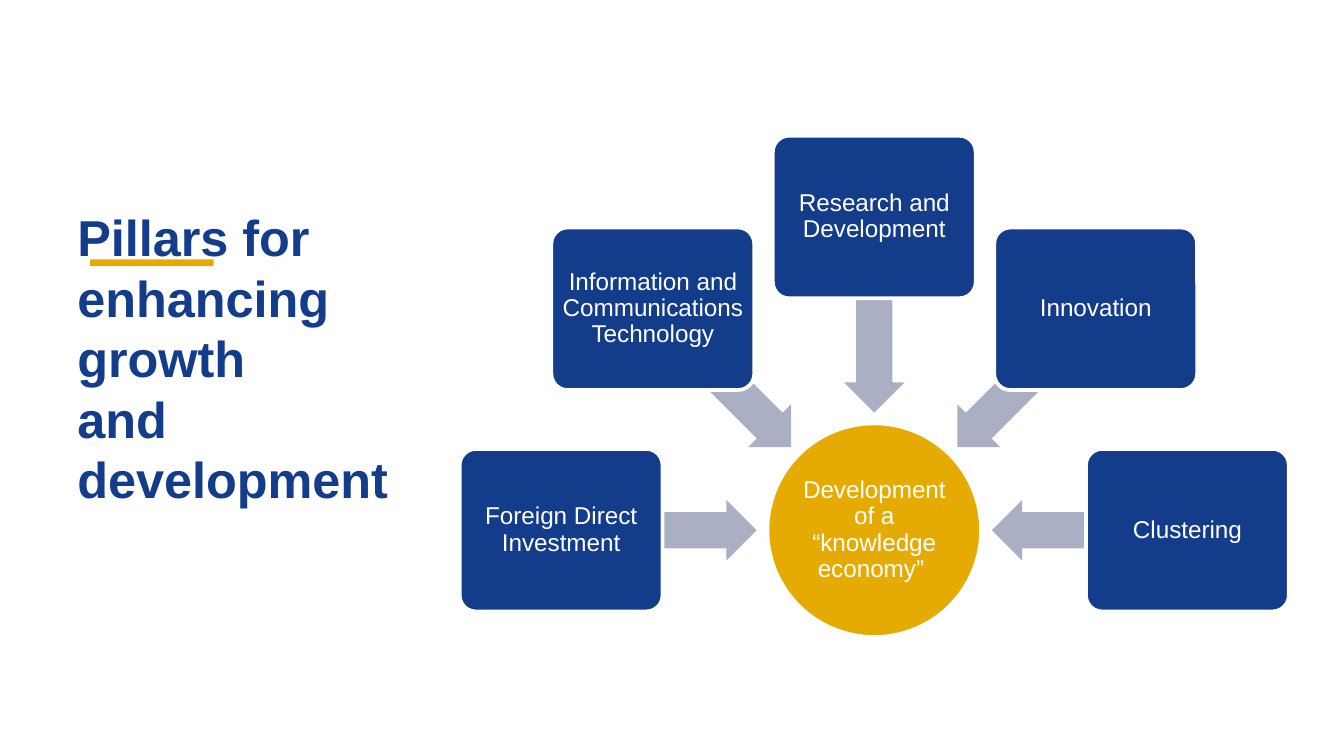
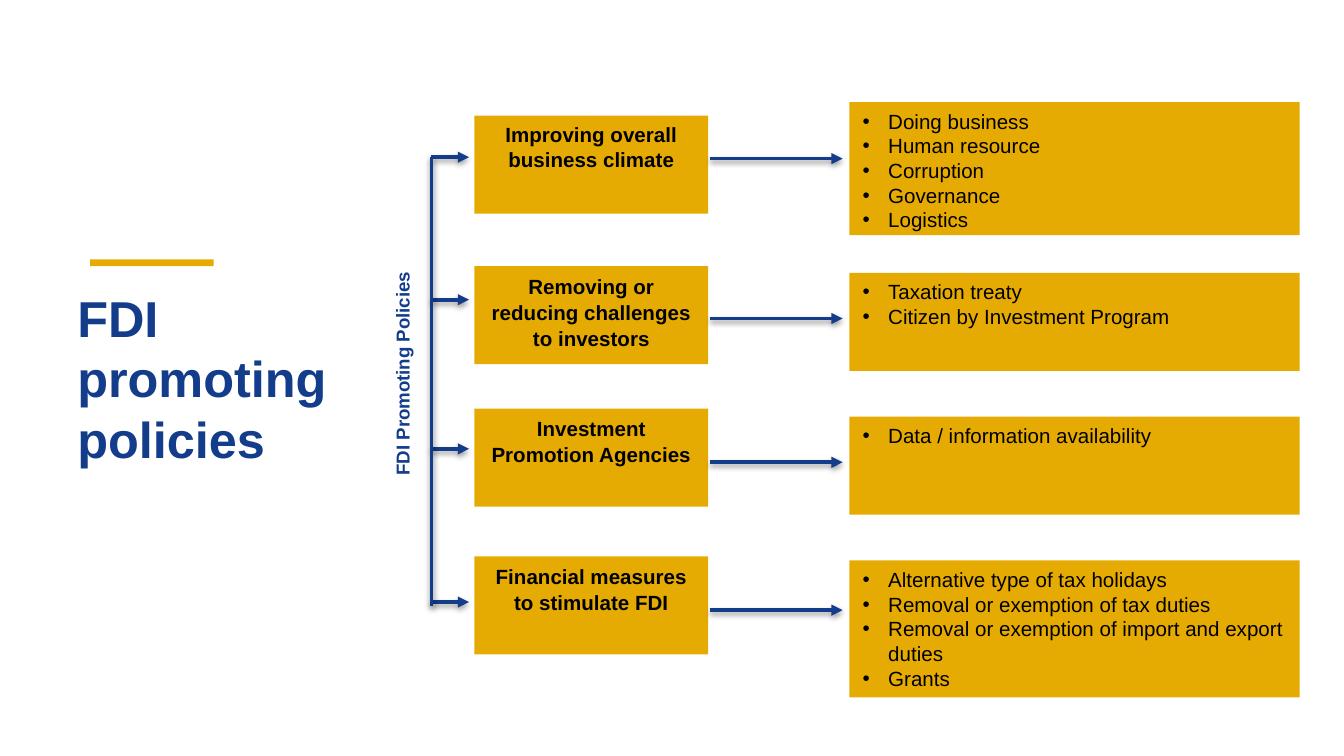
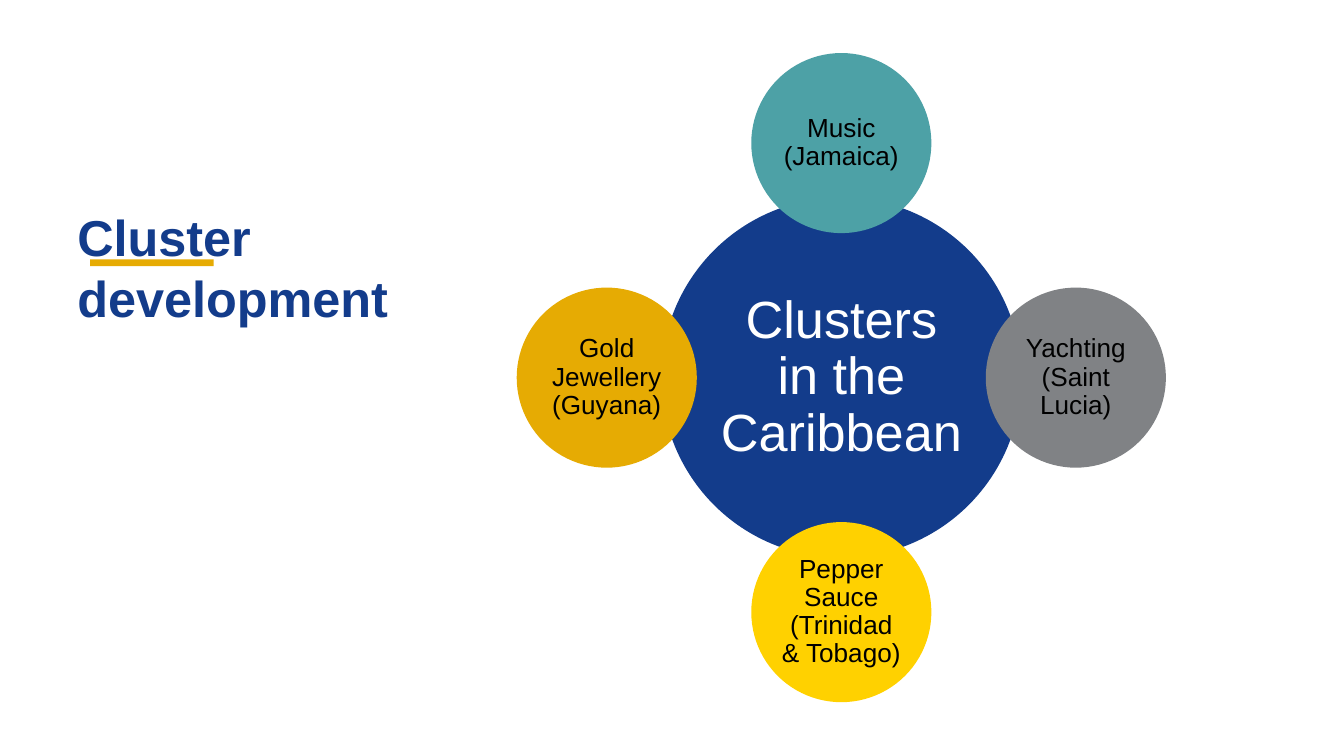
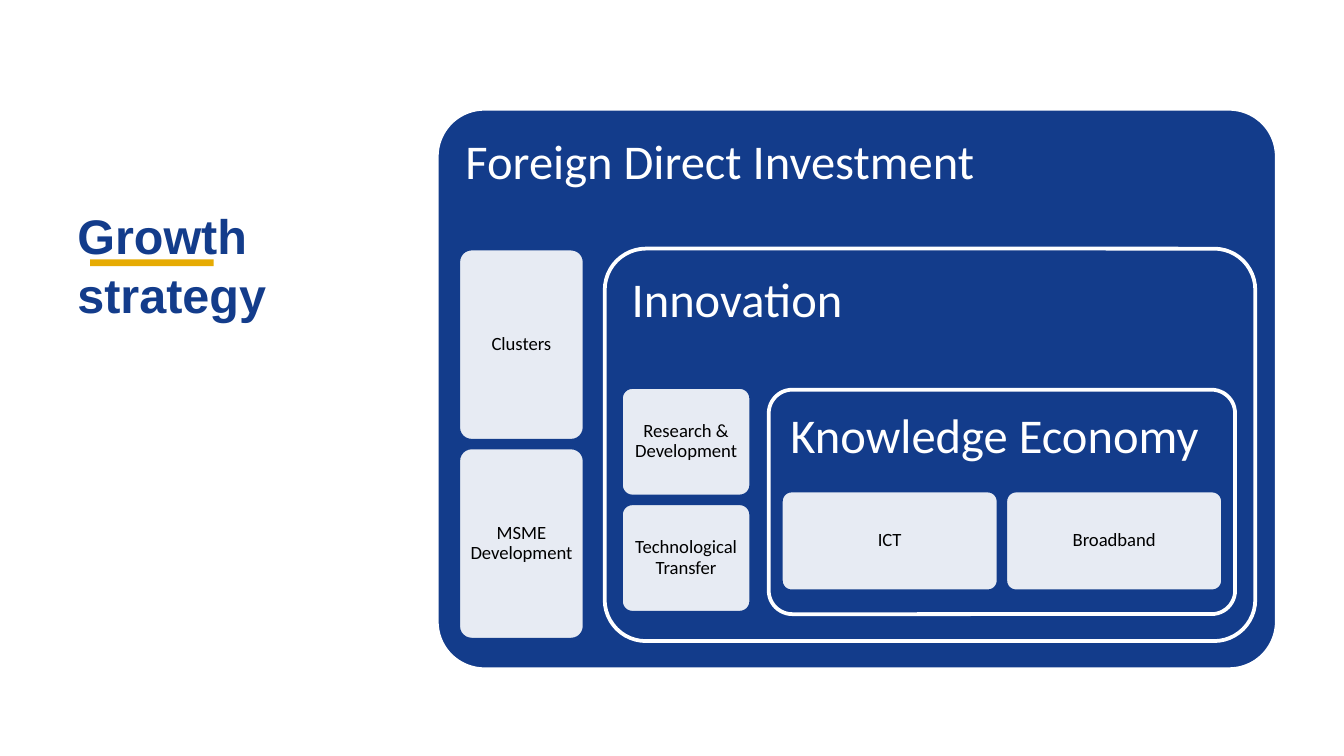
"""Build four slides on growth, investment and clusters."""
from dataclasses import dataclass
from math import cos, radians, sin
from typing import NamedTuple, Optional

from lxml.etree import SubElement
from pptx import Presentation
from pptx.dml.color import RGBColor
from pptx.enum.shapes import MSO_CONNECTOR, MSO_SHAPE
from pptx.enum.text import MSO_ANCHOR, MSO_AUTO_SIZE, PP_ALIGN
from pptx.oxml.ns import qn
from pptx.util import Inches, Pt

COLORS = {
    "navy": "133C8B",
    "gold": "E6AB03",
    "arrow": "ABAFC4",
    "teal": "4DA1A6",
    "gray": "808285",
    "yellow": "FFD100",
    "white": "FFFFFF",
    "black": "000000",
}
SLIDE_WIDTH = Inches(10)
SLIDE_HEIGHT = SLIDE_WIDTH * 9 // 16
GRID_COLUMNS = 100
CELL = SLIDE_WIDTH // GRID_COLUMNS


class Box(NamedTuple):
    """A rectangle in grid cells."""

    left: float
    top: float
    width: float
    height: float

    def lengths(self) -> list[int]:
        """Return the four lengths in slide units."""
        return [cells(value) for value in self]


@dataclass(frozen=True)
class TextStyle:
    """The look of a text."""

    size: float
    color: str = "black"
    font: str = "Arial"
    bold: bool = False
    align: PP_ALIGN = PP_ALIGN.CENTER
    anchor: MSO_ANCHOR = MSO_ANCHOR.MIDDLE
    spacing: Optional[float] = 0.9
    insets: tuple[float, float] = (0.3, 0.3)
    bullet: bool = False


@dataclass(frozen=True)
class ShapeStyle:
    """The look of a preset shape."""

    kind: MSO_SHAPE
    fill: str
    line: Optional[str] = None
    adjustments: tuple[float, ...] = ()
    opacity: int = 100


@dataclass(frozen=True)
class Policy:
    """A policy, its measures and the rows they stand on."""

    topic: str
    topic_top: float
    branch_row: float
    link_row: float
    list_top: float
    list_height: float
    measures: list[str]
    spacing: Optional[float] = 1.05


@dataclass(frozen=True)
class Panel:
    """A nested panel with a grid of tiles."""

    label: str
    box: Box
    corner: float
    tile_area: Box
    tiles: list[str]
    tile_columns: int = 1


def cells(count: float) -> int:
    """Convert grid cells to slide units."""
    return round(count * CELL)


def color(name: str) -> RGBColor:
    """Look up a colour."""
    return RGBColor.from_string(COLORS[name])


def around(center: tuple[float, float], radius: float, angle: float,
           width: float, height: float) -> Box:
    """Return a box centred on a point of a circle."""
    x = center[0] + radius * cos(radians(angle))
    y = center[1] + radius * sin(radians(angle))
    return Box(x - width / 2, y - height / 2, width, height)


def write(shape, paragraphs: list[str], style: TextStyle) -> None:
    """Write paragraphs into a shape, with line breaks at newlines."""
    frame = shape.text_frame
    frame.word_wrap = True
    frame.auto_size = MSO_AUTO_SIZE.NONE
    frame.vertical_anchor = style.anchor
    frame.margin_left = frame.margin_right = cells(style.insets[0])
    frame.margin_top = frame.margin_bottom = cells(style.insets[1])
    for index, text in enumerate(paragraphs):
        paragraph = frame.add_paragraph() if index else frame.paragraphs[0]
        paragraph.alignment = style.align
        if style.spacing:
            paragraph.line_spacing = style.spacing
        if style.bullet:
            add_bullet(paragraph)
        for number, line in enumerate(text.split("\n")):
            if number:
                paragraph.add_line_break()
            run = paragraph.add_run()
            run.text = line
            run.font.size = Pt(style.size)
            run.font.name = style.font
            run.font.bold = style.bold
            run.font.color.rgb = color(style.color)


def add_bullet(paragraph) -> None:
    """Give a paragraph a hanging bullet."""
    properties = paragraph._p.get_or_add_pPr()
    properties.set("marL", str(cells(1.9)))
    properties.set("indent", str(cells(-1.9)))
    SubElement(properties, qn("a:buFont"), typeface="Arial")
    SubElement(properties, qn("a:buChar"), char="•")


def draw(slide, box: Box, style: ShapeStyle, paragraphs: Optional[list[str]] = None,
         text_style: Optional[TextStyle] = None):
    """Draw a preset shape, with text if given."""
    shape = slide.shapes.add_shape(style.kind, *box.lengths())
    shape.shadow.inherit = False
    for index, value in enumerate(style.adjustments):
        shape.adjustments[index] = value
    shape.fill.solid()
    shape.fill.fore_color.rgb = color(style.fill)
    if style.opacity < 100:
        fill = shape.element.spPr.find(qn("a:solidFill"))
        SubElement(fill[0], qn("a:alpha"), val=str(style.opacity * 1000))
    if style.line:
        shape.line.color.rgb = color(style.line)
        shape.line.width = Pt(2)
    else:
        shape.line.fill.background()
    if paragraphs and text_style:
        write(shape, paragraphs, text_style)
    return shape


def connect(slide, start: tuple[float, float], end: tuple[float, float],
            arrow: bool = True) -> None:
    """Draw a navy line with a soft shadow."""
    points = [cells(value) for value in (*start, *end)]
    connector = slide.shapes.add_connector(MSO_CONNECTOR.STRAIGHT, *points)
    connector.line.color.rgb = color("navy")
    connector.line.width = Pt(2)
    properties = connector.element.spPr
    if arrow:
        SubElement(properties.find(qn("a:ln")), qn("a:tailEnd"), type="triangle")
    effects = SubElement(properties, qn("a:effectLst"))
    shadow = SubElement(effects, qn("a:outerShdw"), blurRad=str(Pt(3.1)),
                        dist=str(Pt(1.6)), dir="5400000", rotWithShape="0")
    shade = SubElement(shadow, qn("a:srgbClr"), val=COLORS["black"])
    SubElement(shade, qn("a:alpha"), val="38000")


def add_titled_slide(presentation, title: str, box: Box, size: float = 27):
    """Add a title-only slide with its title set."""
    slide = presentation.slides.add_slide(presentation.slide_layouts[5])
    placeholder = slide.shapes.title
    placeholder.left, placeholder.top, placeholder.width, placeholder.height = box.lengths()
    write(placeholder, [title],
          TextStyle(size, "navy", bold=True, align=PP_ALIGN.LEFT,
                    anchor=MSO_ANCHOR.TOP, spacing=None, insets=(0.75, 0.75)))
    return slide


def share_accent_bar(slide) -> None:
    """Put the gold bar on the layout that all slides use."""
    bar = draw(slide, Box(6.7, 19.3, 9.2, 0.5), ShapeStyle(MSO_SHAPE.RECTANGLE, "gold"))
    bar.element.nvSpPr.cNvPr.set("id", "20")
    slide.slide_layout.shapes.element.append(bar.element)


def build_pillars(presentation):
    """Build the slide of pillars pointing at a hub."""
    slide = add_titled_slide(
        presentation, "Pillars for enhancing growth \nand development",
        Box(5, 14.6, 25.8, 30))
    center = (65.05, 39.45)
    pillar = ShapeStyle(MSO_SHAPE.ROUNDED_RECTANGLE, "navy", "white", (0.1,))
    arrow = ShapeStyle(MSO_SHAPE.LEFT_ARROW, "arrow", adjustments=(0.6, 0.5))
    label = TextStyle(13, "white")
    draw(slide, around(center, 0, 0, 15.9, 15.9),
         ShapeStyle(MSO_SHAPE.OVAL, "gold", "white"),
         ["Development of a “knowledge economy” "],
         TextStyle(13, "white", insets=(0.1, 0.1)))
    names = ["Foreign Direct Investment", "Information and Communications Technology",
             "Research and Development", "Innovation", "Clustering"]
    for index, name in enumerate(names):
        angle = 180 + 45 * index
        pointer = draw(slide, around(center, 16, angle, 14.5, 4.5), arrow)
        pointer.rotation = angle % 360
        draw(slide, around(center, 23.3, angle, 15.1, 12.1), pillar, [name], label)
    return slide


def build_policies(presentation) -> None:
    """Build the slide of policies and their measures."""
    slide = add_titled_slide(presentation, "FDI promoting policies", Box(5, 20.6, 25, 30))
    policies = [
        Policy("Improving overall business climate", 8.6, 11.7, 11.8, 7.6, 9.9,
               ["Doing business", "Human resource", "Corruption", "Governance",
                "Logistics"], None),
        Policy("Removing or reducing challenges to investors", 19.8, 22.3, 23.7, 20.3, 7.3,
               ["Taxation treaty", "Citizen by Investment Program"], 1.06),
        Policy("Investment Promotion Agencies", 30.4, 33.4, 34.4, 31, 7.3,
               ["Data / information availability"]),
        Policy("Financial measures to stimulate FDI", 41.4, 44.8, 45.4, 41.7, 10.2,
               ["Alternative type of tax holidays", "Removal or exemption of tax duties",
                "Removal or exemption of import and export duties", "Grants"]),
    ]
    card = ShapeStyle(MSO_SHAPE.RECTANGLE, "gold")
    measure_text = TextStyle(11, align=PP_ALIGN.LEFT, anchor=MSO_ANCHOR.TOP,
                             spacing=None, insets=(1, 0.5), bullet=True)
    trunk = 32.1
    for policy in policies:
        topic_text = TextStyle(11, bold=True, anchor=MSO_ANCHOR.TOP,
                               spacing=policy.spacing, insets=(1, 0.5))
        draw(slide, Box(35.3, policy.topic_top, 17.4, 7.3), card,
             [policy.topic], topic_text)
        draw(slide, Box(63.2, policy.list_top, 33.5, policy.list_height), card,
             policy.measures, measure_text)
        connect(slide, (trunk, policy.branch_row), (34.9, policy.branch_row))
        connect(slide, (52.8, policy.link_row), (62.7, policy.link_row))
    connect(slide, (trunk, policies[0].branch_row), (trunk, 45.1), arrow=False)
    caption = slide.shapes.add_textbox(*Box(28.6, 13.3, 4.3, 29).lengths())
    write(caption, ["FDI Promoting Policies"],
          TextStyle(10, "navy", bold=True, anchor=MSO_ANCHOR.TOP, spacing=None,
                    insets=(1, 0.5)))
    caption.element.find(".//" + qn("a:bodyPr")).set("vert", "vert270")


def build_clusters(presentation) -> None:
    """Build the slide of clusters around a hub."""
    slide = add_titled_slide(presentation, "Cluster \ndevelopment", Box(5, 14.6, 25.8, 30))
    center = (62.6, 28.1)
    draw(slide, around(center, 0, 0, 26.8, 26.8), ShapeStyle(MSO_SHAPE.OVAL, "navy"),
         ["Clusters in the Caribbean"], TextStyle(28, "white", insets=(0.4, 0.4)))
    clusters = [("Music (Jamaica)", "teal"), ("Yachting (Saint Lucia)", "gray"),
                ("Pepper Sauce (Trinidad & Tobago)", "yellow"),
                ("Gold Jewellery (Guyana)", "gold")]
    for index, (name, fill) in enumerate(clusters):
        draw(slide, around(center, 17.45, 90 * index - 90, 13.4, 13.4),
             ShapeStyle(MSO_SHAPE.OVAL, fill), [name], TextStyle(14, insets=(0.2, 0.2)))


def build_strategy(presentation) -> None:
    """Build the slide of nested strategy panels."""
    slide = add_titled_slide(presentation, "Growth strategy", Box(5, 14.6, 26.7, 30), 26)
    panels = [
        Panel("Foreign Direct Investment", Box(32.5, 8.1, 62.5, 41.7), 0.085,
              Box(34.1, 18.5, 9.4, 29.1), ["Clusters", "MSME Development"]),
        Panel("Innovation", Box(45, 18.5, 48.4, 29.2), 0.105,
              Box(46.2, 28.8, 9.7, 16.8),
              ["Research & Development", "Technological Transfer"]),
        Panel("Knowledge Economy", Box(57.2, 29, 34.7, 16.7), 0.105,
              Box(58.1, 36.5, 32.9, 7.5), ["ICT", "Broadband"], 2),
    ]
    heading = TextStyle(26, "white", "Calibri", align=PP_ALIGN.LEFT,
                        anchor=MSO_ANCHOR.TOP, insets=(1.1, 1.1))
    tile_style = ShapeStyle(MSO_SHAPE.ROUNDED_RECTANGLE, "white", "navy", (0.105,), 90)
    tile_text = TextStyle(10, font="Calibri", insets=(0.4, 0.4))
    gap = 0.5
    for panel in panels:
        draw(slide, panel.box,
             ShapeStyle(MSO_SHAPE.ROUNDED_RECTANGLE, "navy", "white", (panel.corner,)),
             [panel.label], heading)
        area, columns = panel.tile_area, panel.tile_columns
        rows = len(panel.tiles) // columns
        width = (area.width - gap * (columns - 1)) / columns
        height = (area.height - gap * (rows - 1)) / rows
        for index, name in enumerate(panel.tiles):
            row, column = divmod(index, columns)
            tile = Box(area.left + column * (width + gap),
                       area.top + row * (height + gap), width, height)
            draw(slide, tile, tile_style, [name], tile_text)


def main() -> None:
    """Build and save the presentation."""
    presentation = Presentation()
    presentation.slide_width = SLIDE_WIDTH
    presentation.slide_height = SLIDE_HEIGHT
    share_accent_bar(build_pillars(presentation))
    build_policies(presentation)
    build_clusters(presentation)
    build_strategy(presentation)
    presentation.save("out.pptx")


if __name__ == "__main__":
    main()
